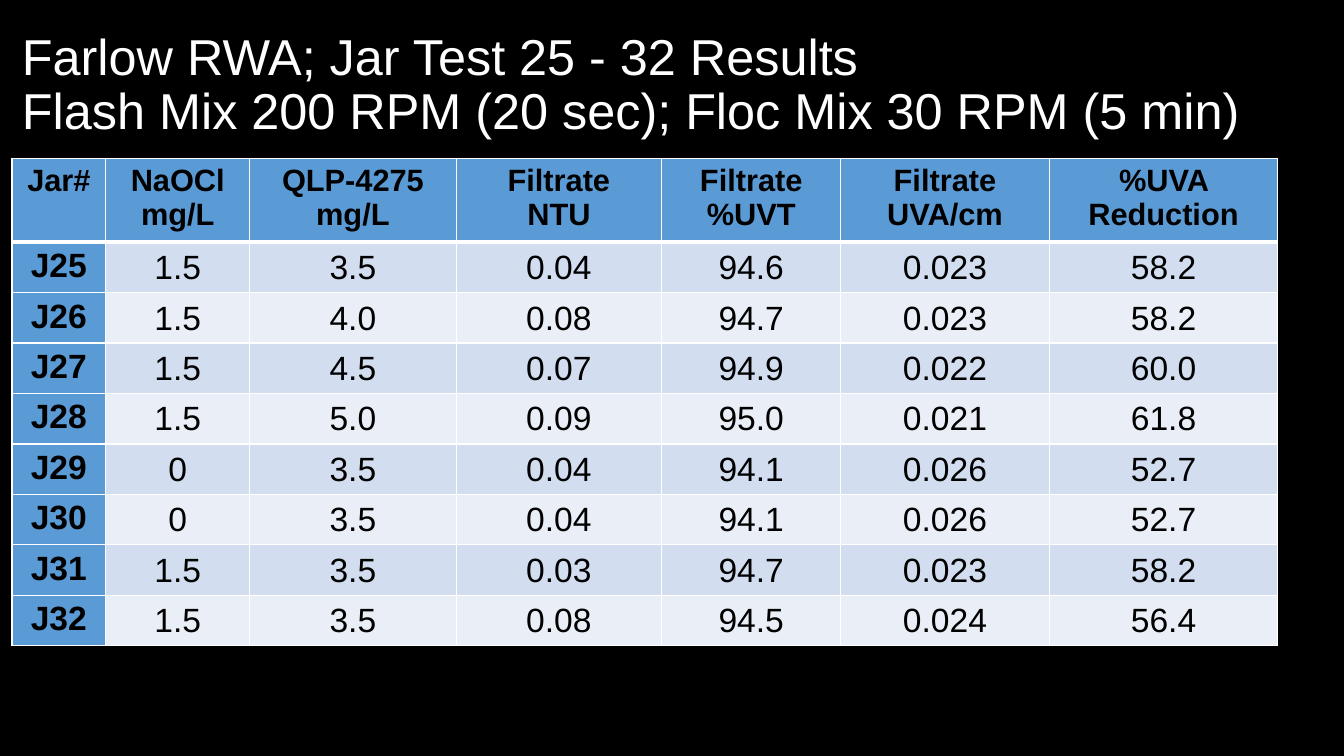
"""Build the jar test results slide."""
from lxml.etree import SubElement
from pptx import Presentation
from pptx.dml.color import RGBColor
from pptx.enum.text import MSO_ANCHOR, PP_ALIGN
from pptx.oxml.ns import qn
from pptx.util import Pt

BLACK = RGBColor(0x00, 0x00, 0x00)
WHITE = RGBColor(0xFF, 0xFF, 0xFF)
BLUE = RGBColor(0x5B, 0x9B, 0xD5)
BANDS = RGBColor(0xD2, 0xDE, 0xEF), RGBColor(0xEA, 0xEF, 0xF7)

TITLE = ("Farlow RWA; Jar Test 25 - 32 Results\v"
         "Flash Mix 200 RPM (20 sec); Floc Mix 30 RPM (5 min)")
COL_WIDTHS = 67, 103, 147.5, 147, 128, 149, 163.5
ROW_HEIGHT = 29.5
ROWS = (
    ("Jar#", "NaOCl\nmg/L", "QLP-4275\nmg/L", "Filtrate\nNTU",
     "Filtrate\n%UVT", "Filtrate\nUVA/cm", "%UVA Reduction"),
    ("J25", "1.5", "3.5", "0.04", "94.6", "0.023", "58.2"),
    ("J26", "1.5", "4.0", "0.08", "94.7", "0.023", "58.2"),
    ("J27", "1.5", "4.5", "0.07", "94.9", "0.022", "60.0"),
    ("J28", "1.5", "5.0", "0.09", "95.0", "0.021", "61.8"),
    ("J29", "0", "3.5", "0.04", "94.1", "0.026", "52.7"),
    ("J30", "0", "3.5", "0.04", "94.1", "0.026", "52.7"),
    ("J31", "1.5", "3.5", "0.03", "94.7", "0.023", "58.2"),
    ("J32", "1.5", "3.5", "0.08", "94.5", "0.024", "56.4"),
)


def write(tf, text, size, color, bold=False, align=PP_ALIGN.LEFT, spacing=None):
    tf.word_wrap = True
    tf.text = text
    for p in tf.paragraphs:
        p.alignment = align
        p.line_spacing = spacing
        for r in p.runs:
            r.font.name = "Arial"
            r.font.size = Pt(size)
            r.font.bold = bold
            r.font.color.rgb = color


def set_borders(cell, **widths):
    tc_pr = cell._tc.get_or_add_tcPr()
    for side in "LRTB":
        ln = SubElement(tc_pr, qn(f"a:ln{side}"), w=str(Pt(widths.get(side, 1))))
        fill = SubElement(ln, qn("a:solidFill"))
        SubElement(fill, qn("a:srgbClr"), val=str(WHITE))


def add_title(slide, left, top, width, height):
    sp = slide.shapes.add_textbox(Pt(left), Pt(top), Pt(width), Pt(height))
    sp.text_frame.vertical_anchor = MSO_ANCHOR.MIDDLE
    write(sp.text_frame, TITLE, 36, WHITE, spacing=0.9)


def add_results(slide, left, top, width, height):
    frame = slide.shapes.add_table(len(ROWS), len(COL_WIDTHS), Pt(left), Pt(top),
                                   Pt(width), Pt(height))
    table = frame.table
    table.first_col = True
    for col, share in zip(table.columns, COL_WIDTHS):
        col.width = Pt(width * share / sum(COL_WIDTHS))
    for i, values in enumerate(ROWS):
        table.rows[i].height = Pt(ROW_HEIGHT)
        for j, value in enumerate(values):
            cell = table.cell(i, j)
            heading = i == 0 or j == 0
            set_borders(cell, T=3 if i == 1 else 1, B=3 if i == 0 else 1)
            cell.fill.solid()
            cell.fill.fore_color.rgb = BLUE if heading else BANDS[(i - 1) % 2]
            write(cell.text_frame, value, 24 if i else 22, BLACK, heading, PP_ALIGN.CENTER)
            if not heading:
                cell.vertical_anchor = MSO_ANCHOR.MIDDLE
                cell.margin_left = cell.margin_right = cell.margin_top = Pt(0.75)
                cell.margin_bottom = Pt(0)
    frame.height = Pt(height)


def main():
    prs = Presentation()
    prs.slide_width, prs.slide_height = Pt(960), Pt(540)
    slide = prs.slides.add_slide(prs.slide_layouts[6])
    slide.background.fill.solid()
    slide.background.fill.fore_color.rgb = BLACK
    add_title(slide, 8.6, 9.4, 938, 104.4)
    add_results(slide, 8.6, 113, 904.3, 347.8)
    prs.save("out.pptx")


if __name__ == "__main__":
    main()
